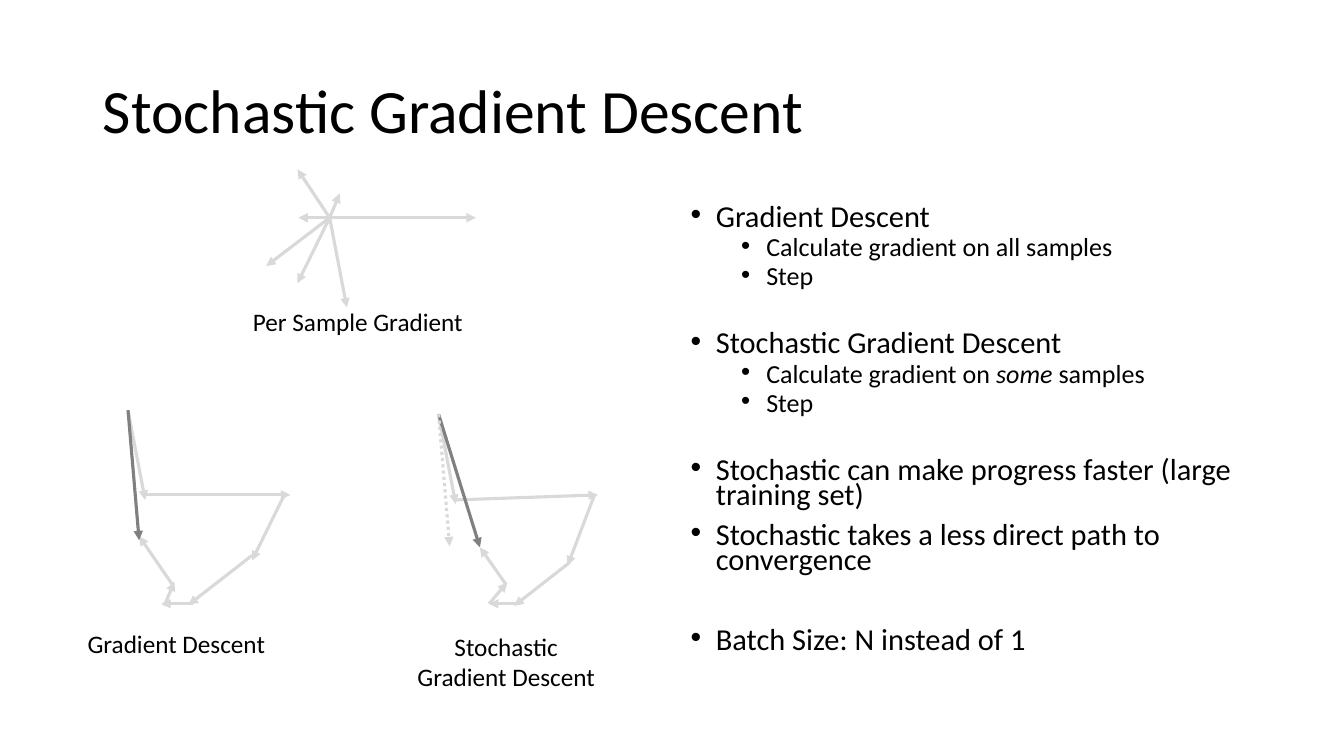
from lxml.etree import SubElement
from pptx import Presentation
from pptx.dml.color import RGBColor
from pptx.enum.dml import MSO_LINE
from pptx.enum.shapes import MSO_CONNECTOR
from pptx.enum.text import MSO_ANCHOR, MSO_AUTO_SIZE, PP_ALIGN
from pptx.oxml.ns import qn
from pptx.util import Pt

PX = 9144  # EMU per px, 100 px to the inch
FONT = "Calibri"
BLACK = RGBColor(0x00, 0x00, 0x00)
LIGHT_GRAY = RGBColor(0xD9, 0xD9, 0xD9)
DARK_GRAY = RGBColor(0x80, 0x80, 0x80)

SAMPLE_ORIGIN = (327, 216)
SAMPLE_TIPS = [(295, 168), (337, 192), (472, 216), (344, 305),
               (295, 281), (264, 264), (296, 216)]

FULL_START = (127, 407)
FULL_PATH = [
    (FULL_START, (144, 496)), ((143, 491), (288, 491)),
    ((282, 491), (250, 556)), ((250, 551), (187, 600)),
    ((191, 599), (160, 599)), ((163, 601), (173, 577)),
    ((171, 580), (138, 532)),
]

STOCHASTIC_START = (435, 411)
STOCHASTIC_PATH = [
    (STOCHASTIC_START, (452, 500)), ((451, 496), (593, 491)),
    ((590, 490), (563, 561)), ((565, 558), (510, 601)),
    ((516, 599), (485, 599)), ((485, 599), (503, 578)),
    ((502, 580), (476, 543)),
]

# (level, space before in points, [(text, italic), ...])
BULLETS = [
    (0, 10, [("Gradient Descent", False)]),
    (1, 5, [("Calculate gradient on all samples", False)]),
    (1, 5, [("Step", False)]),
    (0, 31, [("Stochastic Gradient Descent", False)]),
    (1, 5, [("Calculate gradient on ", False), ("some", True), (" samples", False)]),
    (1, 5, [("Step", False)]),
    (0, 31, [("Stochastic can make progress faster (large training set)", False)]),
    (0, 10, [("Stochastic takes a less direct path to convergence", False)]),
    (0, 38.5, [("Batch Size: N instead of 1", False)]),
]
BULLET_SIZES = [21.7, 18.6]
BULLET_MARGINS = [25, 75]


def place(shape, left, top, width, height):
    shape.left, shape.top = left * PX, top * PX
    shape.width, shape.height = width * PX, height * PX


def add_text(paragraph, text, size=18, color=BLACK, italic=False):
    run = paragraph.add_run()
    run.text = text
    run.font.name = FONT
    run.font.size = Pt(size)
    run.font.color.rgb = color
    run.font.italic = italic


def add_arrow(slide, start, end, color=LIGHT_GRAY, dash=None):
    points = [value * PX for value in (*start, *end)]
    arrow = slide.shapes.add_connector(MSO_CONNECTOR.STRAIGHT, *points)
    arrow.line.color.rgb = color
    arrow.line.width = Pt(2.25)
    if dash:
        arrow.line.dash_style = dash
    properties = arrow._element.spPr
    SubElement(properties.find(qn("a:ln")), qn("a:tailEnd"), type="triangle")
    SubElement(properties, qn("a:effectLst"))


def add_caption(slide, lines, left, top, width, height, align=PP_ALIGN.LEFT):
    box = slide.shapes.add_textbox(left * PX, top * PX, width * PX, height * PX)
    frame = box.text_frame
    frame.word_wrap = False
    frame.auto_size = MSO_AUTO_SIZE.SHAPE_TO_FIT_TEXT
    for index, line in enumerate(lines):
        paragraph = frame.add_paragraph() if index else frame.paragraphs[0]
        paragraph.alignment = align
        add_text(paragraph, line)


def fill_title(title, text):
    place(title, 92, 40, 1150, 145)
    frame = title.text_frame
    frame.vertical_anchor = MSO_ANCHOR.MIDDLE
    frame.auto_size = MSO_AUTO_SIZE.NONE
    paragraph = frame.paragraphs[0]
    paragraph.alignment = PP_ALIGN.LEFT
    paragraph.line_spacing = 0.9
    add_text(paragraph, text, size=44)


def set_bullet(paragraph, margin):
    properties = paragraph._p.get_or_add_pPr()
    properties.set("marL", str(margin * PX))
    properties.set("indent", str(-25 * PX))
    SubElement(properties, qn("a:buFont"), typeface="Arial")
    SubElement(properties, qn("a:buChar"), char="•")


def fill_bullets(body):
    place(body, 675, 200, 598, 476)
    frame = body.text_frame
    frame.auto_size = MSO_AUTO_SIZE.NONE
    for index, (level, space_before, runs) in enumerate(BULLETS):
        paragraph = frame.add_paragraph() if index else frame.paragraphs[0]
        paragraph.level = level
        paragraph.line_spacing = 0.7
        paragraph.space_before = Pt(space_before)
        set_bullet(paragraph, BULLET_MARGINS[level])
        for text, italic in runs:
            add_text(paragraph, text, size=BULLET_SIZES[level], italic=italic)


def main():
    presentation = Presentation()
    presentation.slide_width = 1333 * PX
    presentation.slide_height = 750 * PX
    slide = presentation.slides.add_slide(presentation.slide_layouts[1])

    fill_title(slide.shapes.title, "Stochastic Gradient Descent")
    fill_bullets(slide.placeholders[1])

    for tip in SAMPLE_TIPS:
        add_arrow(slide, SAMPLE_ORIGIN, tip)
    for start, end in FULL_PATH + STOCHASTIC_PATH:
        add_arrow(slide, start, end)
    add_arrow(slide, FULL_START, (138, 536), color=DARK_GRAY)
    add_arrow(slide, STOCHASTIC_START, (476, 543), color=DARK_GRAY)
    add_arrow(slide, STOCHASTIC_START, (446, 542), dash=MSO_LINE.ROUND_DOT)

    add_caption(slide, ["Per Sample Gradient"], 241, 299, 231, 40)
    add_caption(slide, ["Gradient Descent"], 77, 618, 198, 40)
    add_caption(slide, ["Stochastic", "Gradient Descent"], 403, 621, 198, 71,
                align=PP_ALIGN.CENTER)

    presentation.save("out.pptx")


if __name__ == "__main__":
    main()
